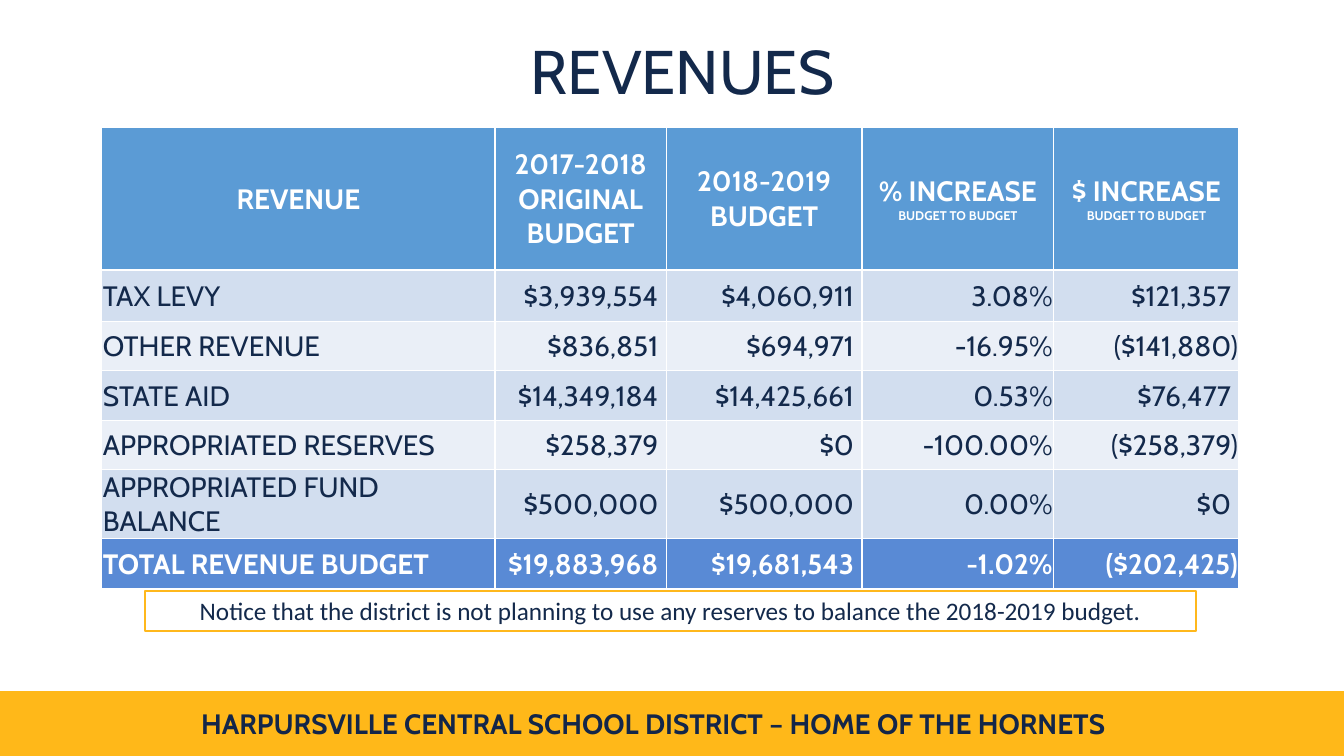
from dataclasses import dataclass

from lxml.etree import SubElement
from pptx import Presentation
from pptx.dml.color import RGBColor
from pptx.enum.shapes import MSO_SHAPE
from pptx.enum.text import MSO_ANCHOR as Anchor, PP_ALIGN as Align
from pptx.oxml.ns import qn
from pptx.util import Emu, Pt

EMU_PER_PX = 9144  # 100 px to the inch


@dataclass(frozen=True)
class Theme:
    navy: str = "13294B"
    footer_navy: str = "132649"
    white: str = "FFFFFF"
    gold: str = "FFB819"
    notice_gold: str = "FFB81C"
    header: str = "5B9BD5"
    bands: tuple[str, str] = ("D2DEEF", "EAEFF7")
    total: str = "598AD5"
    font: str = "Cabin"
    notice_font: str = "Calibri"
    title_size: int = 44
    body_size: int = 20
    notice_size: int = 18
    small_size: int = 9


T = Theme()


@dataclass(frozen=True)
class Box:
    x: int
    y: int
    w: int
    h: int
    text: str = ""
    size: int = T.body_size
    color: str = T.navy
    font: str = T.font
    bold: bool = False
    anchor: Anchor = Anchor.TOP
    spacing: float = 1.0
    fill: str | None = None
    line: str | None = None
    line_width: float = 1


@dataclass(frozen=True)
class RowStyle:
    fill: str
    color: str
    bold: bool


BOXES = [
    Box(0, 686, 1333, 63, fill=T.gold, line=T.gold),
    Box(176, 696, 944, 44, "HARPURSVILLE CENTRAL SCHOOL DISTRICT – HOME OF THE HORNETS",
        color=T.footer_navy, bold=True),
    Box(102, 22, 1150, 104, "REVENUES", T.title_size, anchor=Anchor.MIDDLE,
        spacing=0.9, fill=T.white),
    Box(144, 586, 1042, 40,
        "Notice that the district is not planning to use any reserves to balance "
        "the 2018-2019 budget.",
        T.notice_size, font=T.notice_font, line=T.notice_gold, line_width=1.5),
]

TABLE_X, TABLE_Y = 101, 126
COL_WIDTHS = [390, 170, 194, 190, 184]
ROW_HEIGHTS = [142, 51, 49, 49, 49, 52, 49]
ROWS = [
    ["REVENUE", "2017-2018 ORIGINAL BUDGET", "2018-2019 BUDGET",
     "% INCREASE\nBUDGET TO BUDGET", "$ INCREASE\nBUDGET TO BUDGET"],
    ["TAX LEVY", "$3,939,554", "$4,060,911", "3.08%", "$121,357"],
    ["OTHER REVENUE", "$836,851", "$694,971", "-16.95%", "($141,880)"],
    ["STATE AID", "$14,349,184", "$14,425,661", "0.53%", "$76,477"],
    ["APPROPRIATED RESERVES", "$258,379", "$0", "-100.00%", "($258,379)"],
    ["APPROPRIATED FUND BALANCE", "$500,000", "$500,000", "0.00%", "$0"],
    ["TOTAL REVENUE BUDGET", "$19,883,968", "$19,681,543", "-1.02%", "($202,425)"],
]


def px(n: int) -> Emu:
    return Emu(n * EMU_PER_PX)


def rgb(value: str) -> RGBColor:
    return RGBColor.from_string(value)


def style_font(p, size: int, color: str, font: str = T.font, bold: bool = False) -> None:
    p.font.size = Pt(size)
    p.font.name = font
    p.font.bold = bold
    p.font.color.rgb = rgb(color)


def draw_box(s, box: Box) -> None:
    sp = s.shapes.add_shape(MSO_SHAPE.RECTANGLE, px(box.x), px(box.y), px(box.w), px(box.h))
    sp.shadow.inherit = False
    if box.fill:
        sp.fill.solid()
        sp.fill.fore_color.rgb = rgb(box.fill)
    else:
        sp.fill.background()
    if box.line:
        sp.line.color.rgb = rgb(box.line)
        sp.line.width = Pt(box.line_width)
    else:
        sp.line.fill.background()
    if box.text:
        tf = sp.text_frame
        tf.word_wrap = True
        tf.vertical_anchor = box.anchor
        p = tf.paragraphs[0]
        p.text = box.text
        p.alignment = Align.CENTER
        p.line_spacing = box.spacing
        style_font(p, box.size, box.color, box.font, box.bold)


def row_style(row: int) -> RowStyle:
    if row == 0:
        return RowStyle(T.header, T.white, True)
    if row == len(ROWS) - 1:
        return RowStyle(T.total, T.white, True)
    return RowStyle(T.bands[(row - 1) % 2], T.navy, False)


def set_borders(cell, row: int) -> None:
    # The rule between the header and the body is heavier
    widths = {"a:lnL": 1, "a:lnR": 1,
              "a:lnT": 1.5 if row == 1 else 1, "a:lnB": 1.5 if row == 0 else 1}
    tc_pr = cell._tc.get_or_add_tcPr()
    for i, (tag, width) in enumerate(widths.items()):
        ln = SubElement(tc_pr, qn(tag), w=str(Pt(width)))
        fill = SubElement(ln, qn("a:solidFill"))
        SubElement(fill, qn("a:srgbClr"), val=T.white)
        tc_pr.insert(i, ln)


def fill_cell(cell, row: int, col: int, text: str) -> None:
    style = row_style(row)
    cell.text = text
    cell.vertical_anchor = Anchor.MIDDLE
    cell.margin_left = cell.margin_top = px(1)
    cell.margin_bottom = 0
    # Plain amounts stay clear of the edge that brackets and percent signs touch
    is_amount = row > 0 and text.startswith("$")
    cell.margin_right = px(8 if is_amount else 1)
    cell.fill.solid()
    cell.fill.fore_color.rgb = rgb(style.fill)
    set_borders(cell, row)
    for i, p in enumerate(cell.text_frame.paragraphs):
        p.alignment = Align.CENTER if row == 0 else Align.RIGHT if col else Align.LEFT
        style_font(p, T.small_size if i else T.body_size, style.color, bold=style.bold)


def draw_table(s) -> None:
    table = s.shapes.add_table(len(ROWS), len(COL_WIDTHS), px(TABLE_X), px(TABLE_Y),
                               px(sum(COL_WIDTHS)), px(sum(ROW_HEIGHTS))).table
    table.first_row = table.horz_banding = False
    for column, width in zip(table.columns, COL_WIDTHS):
        column.width = px(width)
    for r, (height, texts) in enumerate(zip(ROW_HEIGHTS, ROWS)):
        table.rows[r].height = px(height)
        for c, text in enumerate(texts):
            fill_cell(table.cell(r, c), r, c, text)


def main() -> None:
    prs = Presentation()
    prs.slide_width, prs.slide_height = px(1333), px(750)
    s = prs.slides.add_slide(prs.slide_layouts[6])

    # Footer, title and notice
    for box in BOXES:
        draw_box(s, box)

    # Revenue table
    draw_table(s)

    prs.save("out.pptx")


if __name__ == "__main__":
    main()
